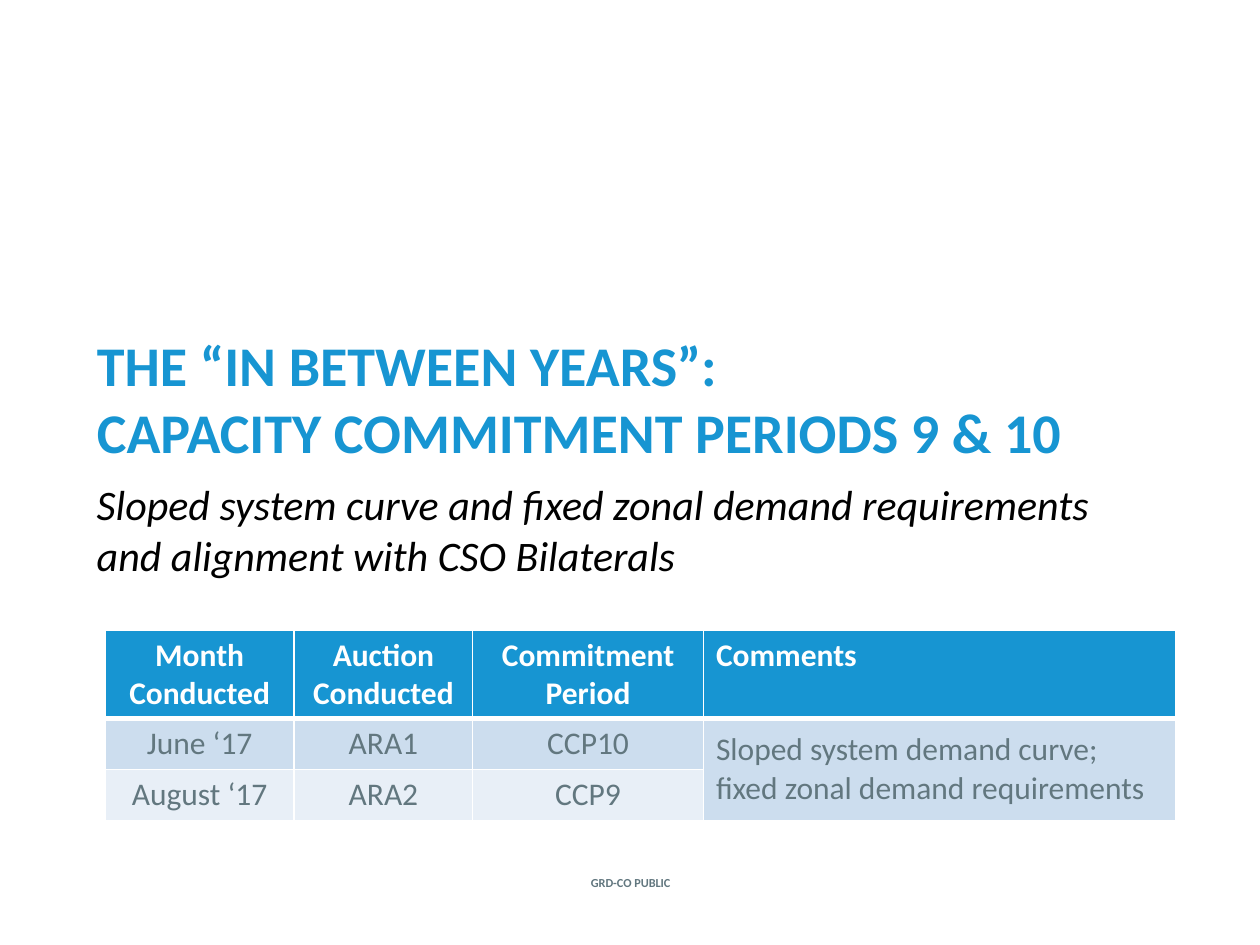
from lxml import etree
from pptx import Presentation
from pptx.dml.color import RGBColor
from pptx.enum.text import MSO_ANCHOR, MSO_AUTO_SIZE, PP_ALIGN
from pptx.oxml.ns import qn
from pptx.util import Cm, Pt

LEFT, MID = PP_ALIGN.LEFT, PP_ALIGN.CENTER
TOP, CENTER, BOTTOM = MSO_ANCHOR.TOP, MSO_ANCHOR.MIDDLE, MSO_ANCHOR.BOTTOM
FIXED = MSO_AUTO_SIZE.NONE
BLUE, GRAY, WHITE, BLACK = "1795D2", "62777F", "FFFFFF", "000000"
BANDS = [BLUE, "CCDDEE", "E8EFF7"]


def color(code):
    return RGBColor.from_string(code)


class Deck:
    font = "Calibri"

    def __init__(self):
        self.file = Presentation()
        self.file.slide_width, self.file.slide_height = Cm(25.4), Cm(19.05)
        self.slide = self.file.slides.add_slide(self.file.slide_layouts[5])

    def label(self, frame, text, size, code, align=LEFT, **form):
        frame.text = text
        frame.word_wrap = True
        for para in frame.paragraphs:
            para.alignment = align
            for run in para.runs:
                look = {"name": self.font, "size": Pt(size), "bold": False, **form}
                for key, value in look.items():
                    setattr(run.font, key, value)
                run.font.color.rgb = color(code)

    def title(self, box, text):
        shape = self.slide.shapes.title
        shape.left, shape.top, shape.width, shape.height = map(Cm, box)
        frame = shape.text_frame
        frame.auto_size = FIXED
        frame.vertical_anchor = BOTTOM
        self.label(frame, text, 32, BLUE, bold=True)

    def text(self, box, text, size, code, align=LEFT, anchor=TOP, **form):
        frame = self.slide.shapes.add_textbox(*map(Cm, box)).text_frame
        frame.vertical_anchor = anchor
        self.label(frame, text, size, code, align, **form)

    def border(self, cell, head):
        props = cell._tc.get_or_add_tcPr()
        for side in "LRTB":
            width = 3 if head and side == "B" else 1
            line = etree.SubElement(props, qn("a:ln" + side), w=str(Pt(width)))
            fill = etree.SubElement(line, qn("a:solidFill"))
            etree.SubElement(fill, qn("a:srgbClr"), val=WHITE)

    def table(self, left, top, widths, heights, rows):
        box = map(Cm, (left, top, sum(widths), sum(heights)))
        grid = self.slide.shapes.add_table(len(rows), len(widths), *box).table
        for col, width in zip(grid.columns, widths):
            col.width = Cm(width)
        for row, height in zip(grid.rows, heights):
            row.height = Cm(height)
        for r, row in enumerate(rows):
            head = r == 0
            for c, text in enumerate(row):
                cell = grid.cell(r, c)
                self.border(cell, head)
                cell.fill.solid()
                cell.fill.fore_color.rgb = color(BANDS[r])
                align = LEFT if c == len(row) - 1 else MID
                self.label(cell.text_frame, text, 18, WHITE if head else GRAY,
                           align, bold=head)
        return grid


def main():
    deck = Deck()
    deck.title((1.7, 5.72, 21.59, 3.78),
               "THE “IN BETWEEN YEARS”:\vCAPACITY COMMITMENT PERIODS 9 & 10")
    deck.text((1.7, 9.53, 21.59, 4.17),
              "Sloped system curve and fixed zonal demand requirements "
              "and alignment with CSO Bilaterals", 24, BLACK, italic=True)
    grid = deck.table(2.12, 12.7, [3.81, 3.6, 4.65, 9.53], [1.78, 1.03, 1.03], [
        ["Month Conducted", "Auction Conducted", "Commitment Period", "Comments"],
        ["June ‘17", "ARA1", "CCP10",
         "Sloped system demand curve; fixed zonal demand requirements"],
        ["August ‘17", "ARA2", "CCP9", ""],
    ])
    note = grid.cell(1, 3)
    note.merge(grid.cell(2, 3))
    note.vertical_anchor = CENTER
    deck.text((10.85, 17.58, 3.73, 0.43), "GRD-CO PUBLIC", 7, GRAY, MID, CENTER,
              bold=True)
    deck.file.save("out.pptx")


if __name__ == "__main__":
    main()
